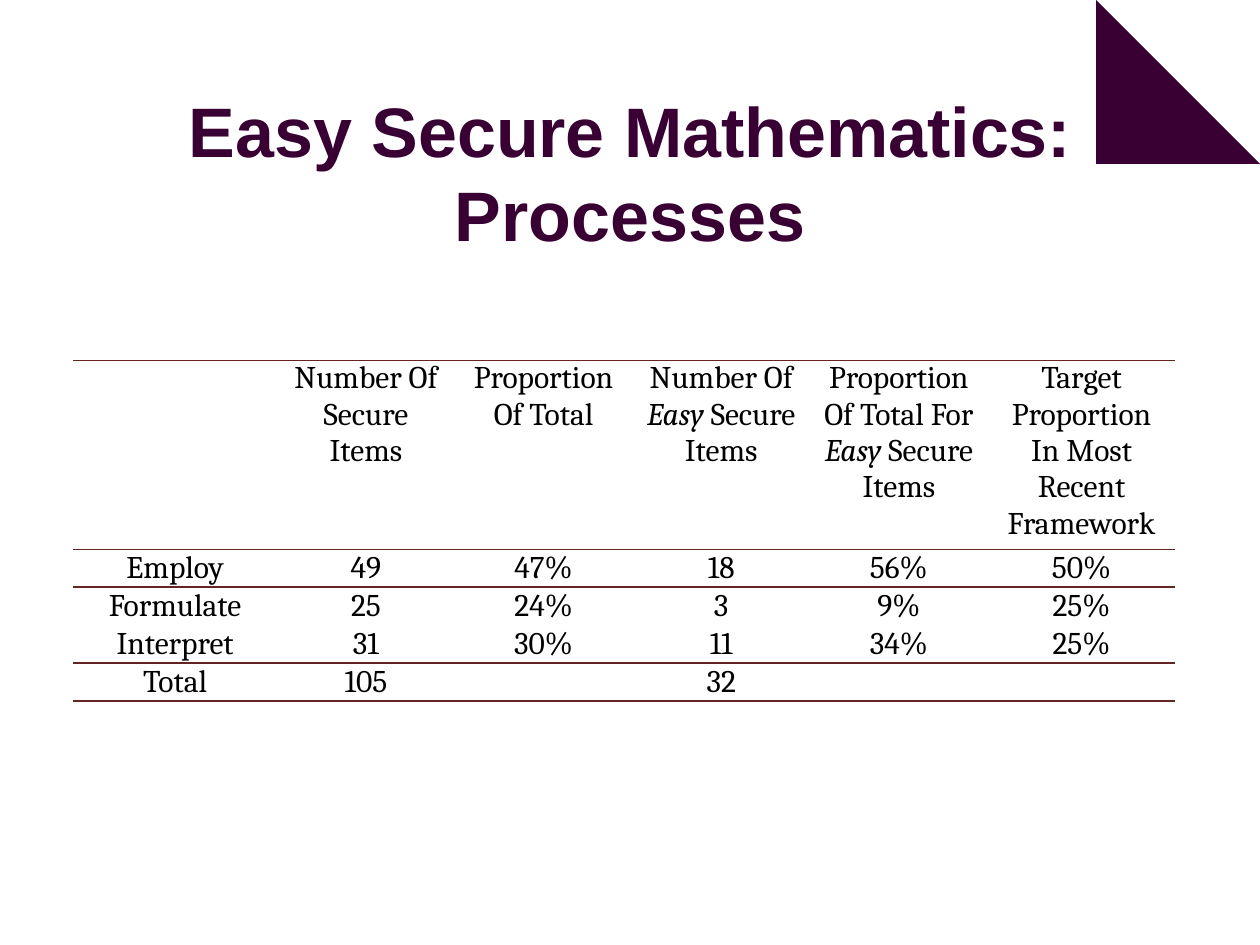
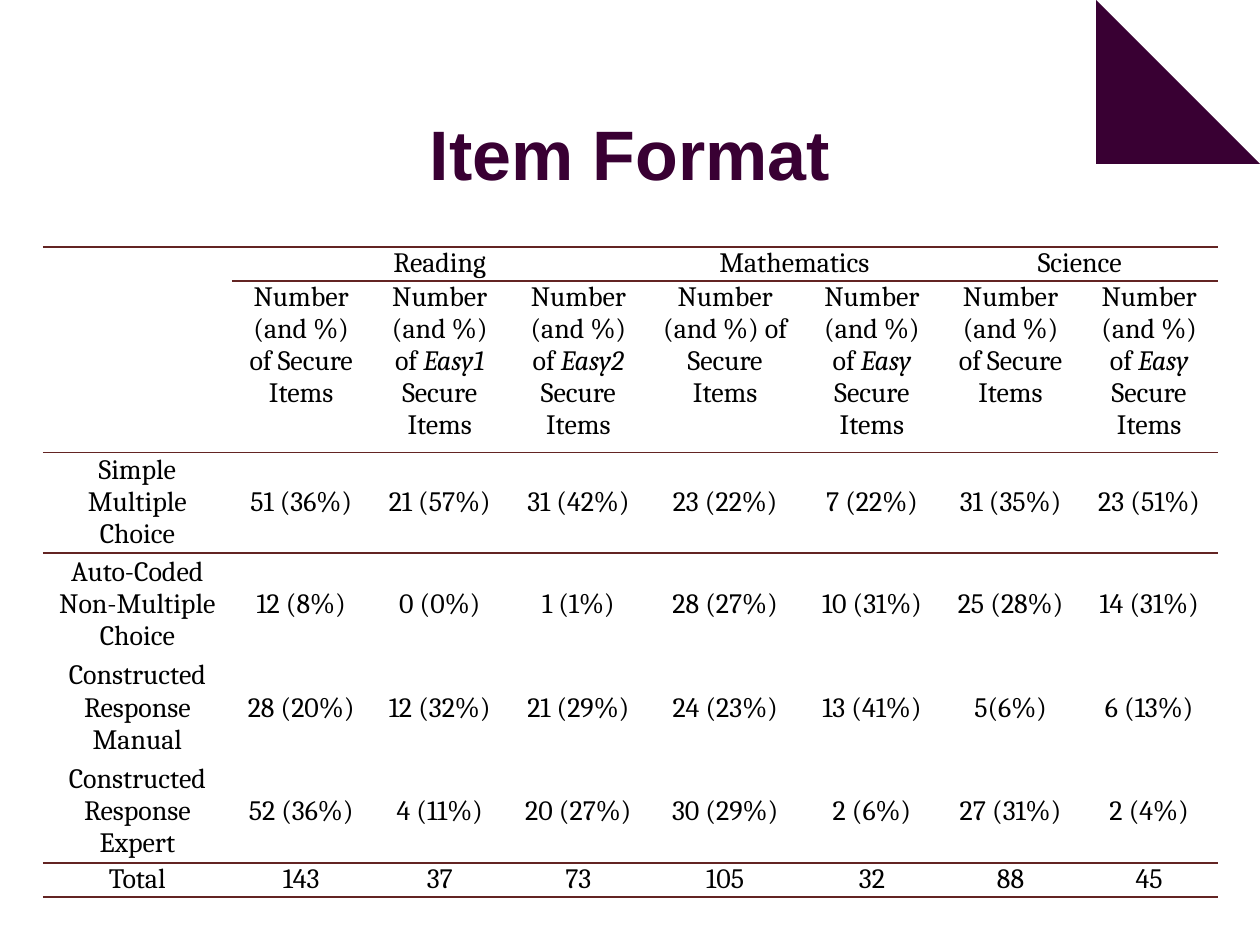
from dataclasses import dataclass

import pptx
import pptx.dml.color
import pptx.enum.shapes
import pptx.enum.text
import pptx.oxml
import pptx.oxml.ns
import pptx.util
from pptx.util import Inches

PLUM = "390033"
RULE = "632423"
BLACK = "000000"
PLAIN_STYLE = "{2D5ABB26-0587-4C30-8999-92F81FD0307C}"
ANCHOR = pptx.enum.text.MSO_ANCHOR
CENTER = pptx.enum.text.PP_ALIGN.CENTER


@dataclass
class Rule:
    """A line below a row; row -1 is the top edge."""
    row: int
    start: int = 0


@dataclass
class Span:
    row: int
    first: int
    last: int


@dataclass
class Grid:
    left: float
    top: float
    size: int
    widths: list[float]
    heights: list[float]
    rows: list[list[str]]
    rules: list[Rule]
    spans: list[Span]
    middle: range  # rows with text centred in height


@dataclass
class Page:
    title: str
    anchor: ANCHOR
    grid: Grid


PAGES = [
    Page("Easy Secure Mathematics: Processes", ANCHOR.BOTTOM, Grid(
        left=0.58, top=2.86, size=18,
        widths=[1.62] + [1.41] * 4 + [1.49],
        heights=[1.44] + [0.29] * 4,
        rows=[
            ["", "Number Of Secure Items", "Proportion Of Total",
             "Number Of *Easy* Secure Items",
             "Proportion Of Total For *Easy* Secure Items",
             "Target Proportion In Most Recent Framework"],
            ["Employ", "49", "47%", "18", "56%", "50%"],
            ["Formulate", "25", "24%", "3", "9%", "25%"],
            ["Interpret", "31", "30%", "11", "34%", "25%"],
            ["Total", "105", "", "32", "", ""],
        ],
        rules=[Rule(-1), Rule(0), Rule(3), Rule(4)],
        spans=[], middle=range(1, 5))),
    Page("Item Format", ANCHOR.TOP, Grid(
        left=0.34, top=1.96, size=16,
        widths=[1.5] + [1.1] * 3 + [1.23] + [1.1] * 3,
        heights=[0.27, 1.36, 0.77] + [0.82] * 3 + [0.27],
        rows=[
            ["", "Reading", "", "", "Mathematics", "", "Science", ""],
            ["", "Number (and %) of Secure Items",
             "Number (and %) of *Easy1* Secure Items",
             "Number (and %) of *Easy2* Secure Items"]
            + ["Number (and %) of Secure Items",
               "Number (and %) of *Easy* Secure Items"] * 2,
            ["Simple Multiple Choice", "51 (36%)", "21 (57%)", "31 (42%)",
             "23 (22%)", "7 (22%)", "31 (35%)", "23 (51%)"],
            ["Auto-Coded Non-Multiple Choice", "12 (8%)", "0 (0%)", "1 (1%)",
             "28 (27%)", "10 (31%)", "25 (28%)", "14 (31%)"],
            ["Constructed Response Manual", "28 (20%)", "12 (32%)", "21 (29%)",
             "24 (23%)", "13 (41%)", "5(6%)", "6 (13%)"],
            ["Constructed Response Expert", "52 (36%)", "4 (11%)", "20 (27%)",
             "30 (29%)", "2 (6%)", "27 (31%)", "2 (4%)"],
            ["Total", "143", "37", "73", "105", "32", "88", "45"],
        ],
        rules=[Rule(-1), Rule(0, start=1), Rule(1), Rule(5), Rule(6)],
        spans=[Span(0, 1, 3), Span(0, 4, 5), Span(0, 6, 7)],
        middle=range(2, 6))),
]


def color(code: str) -> pptx.dml.color.RGBColor:
    return pptx.dml.color.RGBColor.from_string(code)


def style(para, name: str, size: int, code: str) -> None:
    para.alignment = CENTER
    para.font.name = name
    para.font.size = pptx.util.Pt(size)
    para.font.color.rgb = color(code)


def draw_frame(slide, page: Page) -> None:
    """Draw the corner triangle and the title."""
    corner = slide.shapes.add_shape(
        pptx.enum.shapes.MSO_SHAPE.RIGHT_TRIANGLE,
        Inches(8.7), 0, Inches(1.3), Inches(1.3))
    corner.shadow.inherit = False
    corner.fill.solid()
    corner.fill.fore_color.rgb = color(PLUM)
    corner.line.fill.background()

    frame = slide.shapes.add_textbox(
        Inches(0.75), Inches(0.83), Inches(8.5), Inches(1.25)).text_frame
    frame.word_wrap = True
    frame.vertical_anchor = page.anchor
    para = frame.paragraphs[0]
    para.text = page.title
    para.line_spacing = pptx.util.Pt(48)
    style(para, "Arial", 40, PLUM)
    para.font.bold = True


def fill_cell(cell, text: str, size: int, middle: bool) -> None:
    """Write text in a cell; words between asterisks are italic."""
    cell.fill.background()
    cell.margin_left = cell.margin_right = Inches(0.07)
    cell.margin_top = cell.margin_bottom = 0
    cell.vertical_anchor = ANCHOR.MIDDLE if middle else ANCHOR.TOP
    para = cell.text_frame.paragraphs[0]
    style(para, "Cambria", size, BLACK)
    if not text:
        # An empty cell takes its line height from the end mark.
        para._p.get_or_add_endParaRPr().set("sz", str(size * 100))
    for index, part in enumerate(text.split("*")):
        if part:
            run = para.add_run()
            run.text = part
            if index % 2:
                run.font.italic = True


def add_edge(cell, side: str) -> None:
    """Draw the top (T) or bottom (B) edge of a cell."""
    line = pptx.oxml.parse_xml(
        f'<a:ln{side} {pptx.oxml.ns.nsdecls("a")} w="12700"><a:solidFill>'
        f'<a:srgbClr val="{RULE}"/></a:solidFill></a:ln{side}>')
    props = cell._tc.get_or_add_tcPr()
    tops = props.findall(pptx.oxml.ns.qn("a:lnT"))
    props.insert(len(tops), line)


def draw_grid(slide, grid: Grid) -> None:
    table = slide.shapes.add_table(
        len(grid.heights), len(grid.widths), Inches(grid.left),
        Inches(grid.top), Inches(sum(grid.widths)),
        Inches(sum(grid.heights))).table
    table.first_row = table.horz_banding = False
    props = table._tbl.tblPr
    props.find(pptx.oxml.ns.qn("a:tableStyleId")).text = PLAIN_STYLE
    for column, width in zip(table.columns, grid.widths):
        column.width = Inches(width)
    for row, height in zip(table.rows, grid.heights):
        row.height = Inches(height)
    for r, texts in enumerate(grid.rows):
        for c, text in enumerate(texts):
            fill_cell(table.cell(r, c), text, grid.size, r in grid.middle)
    for rule in grid.rules:
        for c in range(rule.start, len(grid.widths)):
            if rule.row >= 0:
                add_edge(table.cell(rule.row, c), "B")
            if rule.row + 1 < len(grid.heights):
                add_edge(table.cell(rule.row + 1, c), "T")
    for span in grid.spans:
        table.cell(span.row, span.first).merge(
            table.cell(span.row, span.last))


def main() -> None:
    deck = pptx.Presentation()
    deck.slide_width, deck.slide_height = Inches(10), Inches(7.5)
    for page in PAGES:
        slide = deck.slides.add_slide(deck.slide_layouts[6])
        draw_frame(slide, page)
        draw_grid(slide, page.grid)
    deck.save("out.pptx")


if __name__ == "__main__":
    main()
